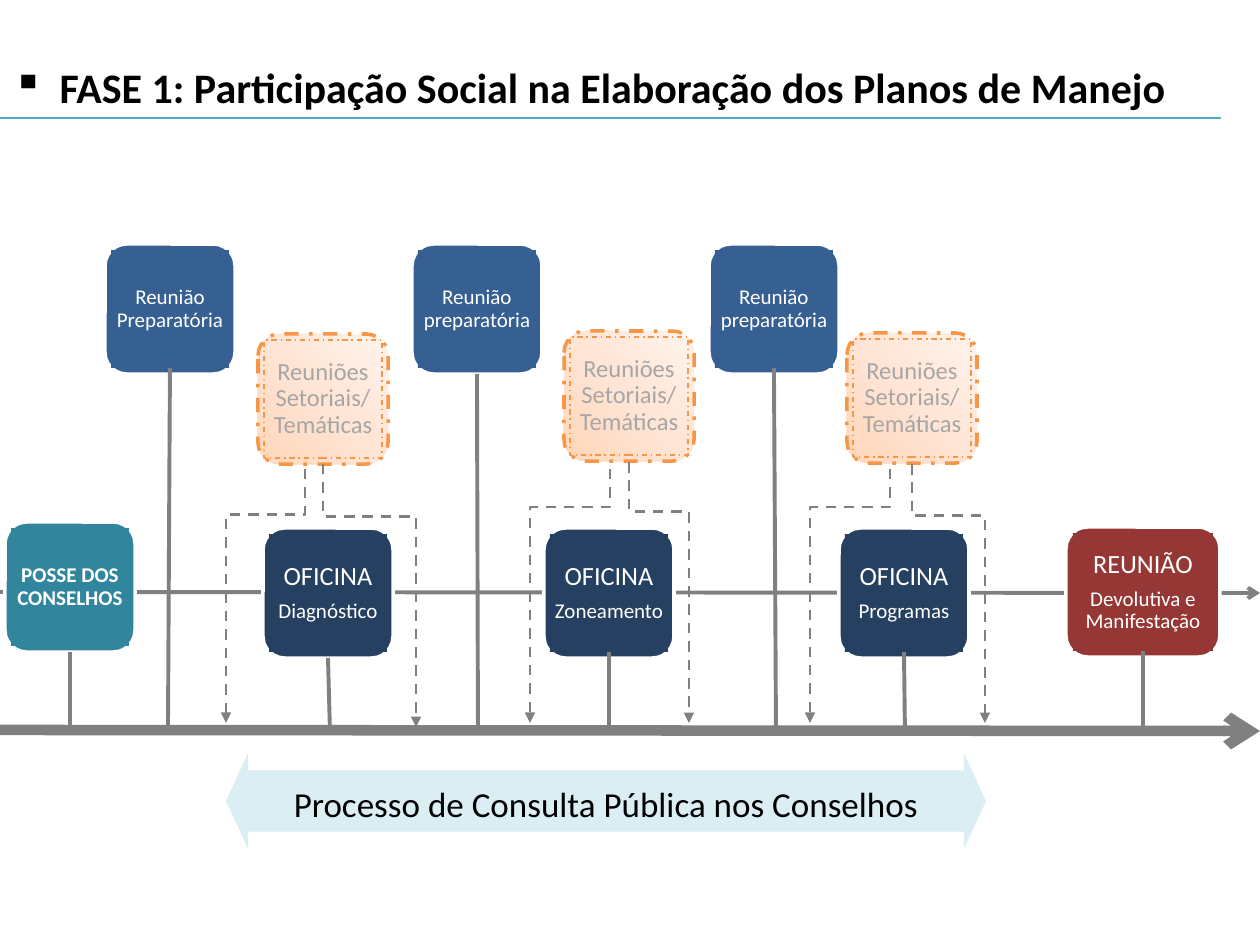
import pptx
import pptx.util
import pptx.dml.color
import pptx.enum.dml
import pptx.enum.shapes
import pptx.enum.text
import pptx.oxml
import pptx.oxml.ns
from lxml import etree

SHAPE = pptx.enum.shapes.MSO_SHAPE
CONNECTOR = pptx.enum.shapes.MSO_CONNECTOR
DASH = pptx.enum.dml.MSO_LINE
ALIGN = pptx.enum.text.PP_ALIGN
ANCHOR = pptx.enum.text.MSO_ANCHOR
qn = pptx.oxml.ns.qn

GRAY, WHITE, BLACK, ORANGE = "808080", "FFFFFF", "000000", "F79646"
PEACH = ((0, "FFD8BC"), (50, "FFE5D5"), (100, "FFF2EA"))


def px(length):
    return round(length * 914400 / 126)


def rgb(code):
    return pptx.dml.color.RGBColor.from_string(code)


def assign(target, formats):
    for name, value in formats.items():
        setattr(target, name, value)


class Diagram:
    """Holds the shared style and the slide, and draws each kind of element."""

    font_name = "Calibri"
    card_side = 130

    def __init__(self, slide):
        self.slide = slide

    def add_words(self, paragraph, text, size, color, bold=False, **formats):
        run = paragraph.add_run()
        run.text = text
        assign(run.font, {"name": self.font_name, "size": pptx.util.Pt(size), "bold": bold})
        run.font.color.rgb = rgb(color)
        assign(paragraph, formats)

    def outline(self, line, color, width, dash=None):
        line.color.rgb = rgb(color)
        assign(line, {"width": pptx.util.Pt(width), "dash_style": dash})

    def paint(self, shape, fill):
        shape.shadow.inherit = False
        if isinstance(fill, str):
            shape.fill.solid()
            shape.fill.fore_color.rgb = rgb(fill)
            return
        stops = "".join(
            f'<a:gs pos="{place * 1000}"><a:srgbClr val="{color}"/></a:gs>' for place, color in fill)
        gradient = pptx.oxml.parse_xml(
            f'<a:gradFill {pptx.oxml.ns.nsdecls("a")}><a:gsLst>{stops}</a:gsLst>'
            '<a:path path="circle"><a:fillToRect t="100000" r="100000"/></a:path></a:gradFill>')
        shape.fill.background()
        properties = shape.element.spPr
        properties.replace(properties.find(qn("a:noFill")), gradient)

    def title(self, text, x, y, w, h):
        title = self.slide.shapes.title
        assign(title, {"left": px(x), "top": px(y), "width": px(w), "height": px(h)})
        assign(title.text_frame, {"vertical_anchor": ANCHOR.TOP, "word_wrap": True,
                                  "auto_size": pptx.enum.text.MSO_AUTO_SIZE.NONE})
        paragraph = title.text_frame.paragraphs[0]
        self.add_words(paragraph, text, 24, BLACK, True, alignment=ALIGN.LEFT)
        properties = paragraph._p.get_or_add_pPr()
        properties.set("marL", str(px(47)))
        properties.set("indent", str(-px(47)))
        etree.SubElement(properties, qn("a:buChar")).set("char", "▪")

    def card(self, x, y, fill, lines, width=card_side, color=WHITE, bold=False, dashed=False):
        shapes = self.slide.shapes.add_group_shape().shapes
        inset_x, inset_y = width // 20, 6
        frame = shapes.add_shape(SHAPE.ROUNDED_RECTANGLE,
                                 px(x), px(y), px(width), px(self.card_side))
        label = shapes.add_shape(SHAPE.RECTANGLE, px(x + inset_x), px(y + inset_y),
                                 px(width - 2 * inset_x), px(self.card_side - 2 * inset_y))
        for shape in (frame, label):
            self.paint(shape, fill)
        if dashed:
            self.outline(frame.line, ORANGE, 2, DASH.DASH_DOT)
            self.outline(label.line, ORANGE, 0.75, DASH.DASH_DOT)
        else:
            self.outline(frame.line, WHITE, 2)
            label.line.fill.background()
        text = label.text_frame
        margins = ("margin_left", "margin_top", "margin_right", "margin_bottom")
        assign(text, dict.fromkeys(margins, px(2)))
        assign(text, {"word_wrap": True, "vertical_anchor": ANCHOR.MIDDLE})
        for index, (words, size) in enumerate(lines):
            paragraph = text.add_paragraph() if index else text.paragraphs[0]
            self.add_words(paragraph, words, size, color, bold, alignment=ALIGN.CENTER,
                           line_spacing=0.9, space_after=pptx.util.Pt(size * 0.35))
        return frame, label

    def line(self, start, end, color=GRAY, width=2.25, head=None, dash=None,
             kind=CONNECTOR.STRAIGHT):
        connector = self.slide.shapes.add_connector(kind, *map(px, (*start, *end)))
        self.outline(connector.line, color, width, dash)
        properties = connector.element.spPr
        if head:
            etree.SubElement(properties.find(qn("a:ln")), qn("a:tailEnd")).set("type", head)
        etree.SubElement(properties, qn("a:effectLst"))
        return connector

    def stem(self, shape, end):
        self.line(end, end).begin_connect(shape, 2)

    def elbow(self, start, end, bend):
        (x1, y1), (x2, y2) = start, end
        run, drop = abs(x2 - x1), y2 - y1
        left, top = (x1 + x2 - drop) / 2, (y1 + y2 - run) / 2
        ends = [left, left + drop]
        rightward = x2 > x1
        if rightward:
            ends.reverse()
        connector = self.line((ends[0], top), (ends[1], top + run), width=1.5,
                              head="triangle", dash=DASH.DASH, kind=CONNECTOR.ELBOW)
        properties = connector.element.spPr
        properties.find(qn("a:xfrm")).set("rot", str((270 if rightward else 90) * 60000))
        guide = etree.SubElement(properties.find(qn("a:prstGeom")).find(qn("a:avLst")), qn("a:gd"))
        guide.set("name", "adj1")
        guide.set("fmla", f"val {round(bend * 100000)}")

    def banner(self, text, x, y, w, h):
        arrow = self.slide.shapes.add_shape(SHAPE.LEFT_RIGHT_ARROW, px(x), px(y), px(w), px(h))
        arrow.adjustments[0], arrow.adjustments[1] = 0.64, 0.23
        self.paint(arrow, "DBEEF4")
        arrow.line.fill.background()
        assign(arrow.text_frame, {"word_wrap": True, "vertical_anchor": ANCHOR.TOP})
        self.add_words(arrow.text_frame.paragraphs[0], text, 20, BLACK,
                       alignment=ALIGN.CENTER, line_spacing=1.15)


def main():
    deck = pptx.Presentation()
    assign(deck, {"slide_width": px(1260), "slide_height": px(945)})
    diagram = Diagram(deck.slides.add_slide(deck.slide_layouts[5]))

    diagram.title("FASE 1: Participação Social na Elaboração dos Planos de Manejo", 0, 55, 1260, 63)
    diagram.line((0, 118), (1221, 118), "4BACC6", 0.75)
    diagram.line((0, 592), (1260, 593), head="arrow")

    board, _ = diagram.card(5, 522, "31859C", [("POSSE DOS CONSELHOS", 12)], bold=True)
    diagram.stem(board, (70, 725))

    for x, words, side, end in ((105, "Reunião Preparatória", 1, (168, 730)),
                                (412, "Reunião preparatória", 0, (478, 730)),
                                (709, "Reunião preparatória", 1, (776, 731))):
        preparation = diagram.card(x, 244, "376092", [(words, 12)])
        diagram.stem(preparation[side], end)

    for x, topic, side, end in ((263, "Diagnóstico", 0, (330, 732)),
                                (544, "Zoneamento", 1, (609, 732)),
                                (839, "Programas", 1, (905, 732))):
        workshop = diagram.card(x, 528, "254061", [("OFICINA", 15), (topic, 12)])
        diagram.stem(workshop[side], end)

    for x, y in ((258, 334), (564, 331), (847, 333)):
        diagram.card(x, y, PEACH, [("Reuniões Setoriais/ Temáticas", 14)],
                     color="A6A6A6", dashed=True)

    closing = [("REUNIÃO", 15), ("Devolutiva e Manifestação", 12)]
    _, feedback = diagram.card(1066, 527, "953735", closing, width=154)
    diagram.stem(feedback, (1143, 727))

    diagram.line((0, 730), (1260, 731), width=6, head="arrow")

    for start, end, bend in (((323, 464), (416, 727), 0.2),
                             ((629, 462), (689, 723), 0.19),
                             ((912, 464), (985, 723), 0.2),
                             ((305, 469), (226, 723), 0.18),
                             ((610, 469), (530, 723), 0.15),
                             ((890, 469), (810, 723), 0.15)):
        diagram.elbow(start, end, bend)

    diagram.banner("Processo de Consulta Pública nos Conselhos", 226, 753, 760, 96)
    deck.save("out.pptx")


if __name__ == "__main__":
    main()
